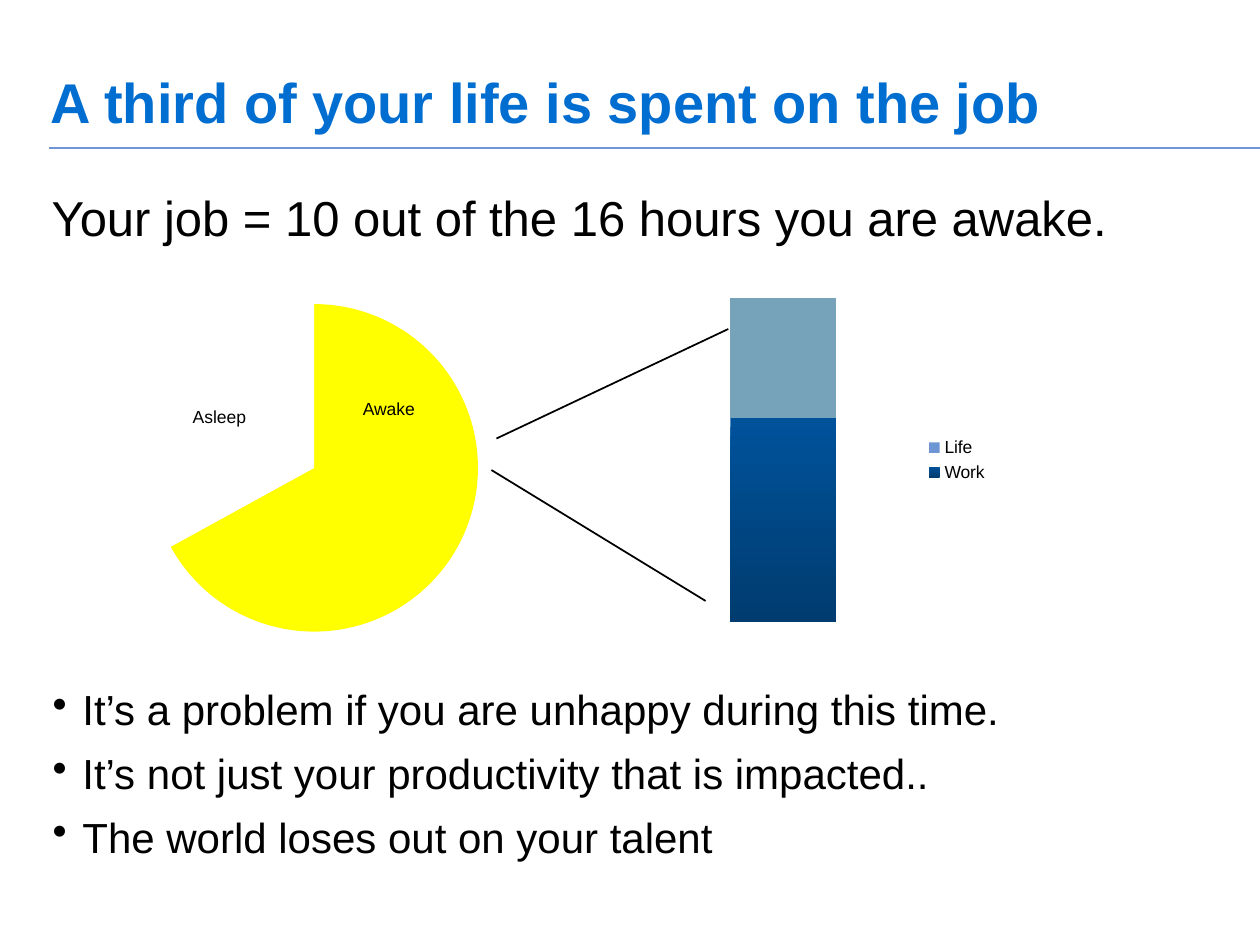
from lxml import etree
from pptx import Presentation
from pptx import util as u
from pptx.chart.data import CategoryChartData
from pptx.dml.color import RGBColor
from pptx.enum import chart as ch, shapes, text
from pptx.oxml import ns

Pt = u.Pt
HUES = {
    "title": "006DD0", "rule": "6E96D5", "ink": "000000",
    "awake": "FFFF00", "asleep": "FFFFFF",
    "work": "00529B", "deep": "003C6F", "life": "6E96D5", "free": "76A3BA",
}


def hue(name):
    return RGBColor.from_string(HUES[name])


def paint(fill, name):
    fill.solid()
    fill.fore_color.rgb = hue(name)


class Deck:
    """Holds the style and the current slide."""

    face = "Arial"

    def __init__(self):
        self.show = Presentation()
        self.show.slide_width, self.show.slide_height = Pt(720), Pt(540)
        self.slide = self.show.slides.add_slide(self.show.slide_layouts[1])

    def typeset(self, shape, lines, size, tone="ink", bold=False, bullet=None,
                indent=0, gap=(0, 0), anchor=text.MSO_ANCHOR.TOP, pad=3.6):
        frame = shape.text_frame
        form = {"word_wrap": True, "auto_size": text.MSO_AUTO_SIZE.NONE,
                "vertical_anchor": anchor, "margin_left": Pt(7.2),
                "margin_right": Pt(7.2), "margin_top": Pt(pad),
                "margin_bottom": Pt(pad)}
        for key, value in form.items():
            setattr(frame, key, value)
        frame.text = "\n".join(lines)
        for i, para in enumerate(frame.paragraphs):
            props = para._p.get_or_add_pPr()
            props.set("marL", str(Pt(indent)))
            props.set("indent", str(-Pt(indent)))
            mark = etree.SubElement(props, ns.qn("a:buChar" if bullet else "a:buNone"))
            if bullet:
                mark.set("char", bullet)
            form = {"alignment": text.PP_ALIGN.LEFT, "line_spacing": 0.9,
                    "space_before": Pt(gap[0] if i else 0),
                    "space_after": Pt(gap[1])}
            for key, value in form.items():
                setattr(para, key, value)
            for run in para.runs:
                self.style(run.font, size, tone, bold)

    def style(self, font, size, tone="ink", bold=False):
        form = {"name": self.face, "size": Pt(size), "bold": bold}
        for key, value in form.items():
            setattr(font, key, value)
        font.color.rgb = hue(tone)

    def fill(self, index, box, lines, size, **form):
        """Move and fill a template placeholder."""
        shape = self.slide.placeholders[index]
        shape.left, shape.top, shape.width, shape.height = map(Pt, box)
        self.typeset(shape, lines, size, **form)

    def text(self, box, lines, size, **form):
        self.typeset(self.slide.shapes.add_textbox(*map(Pt, box)), lines, size, **form)

    def line(self, start, end, tone="ink"):
        link = self.slide.shapes.add_connector(
            shapes.MSO_CONNECTOR.STRAIGHT, *map(Pt, start + end))
        link.line.color.rgb = hue(tone)
        link.line.width = Pt(1)
        etree.SubElement(link._element.spPr, ns.qn("a:effectLst"))

    def chart(self, kind, box, cats, series, area):
        """Add a chart whose plot fills the given fractions (x, y, w, h)."""
        data = CategoryChartData()
        data.categories = cats
        for name, values in series:
            data.add_series(name, values)
        chart = self.slide.shapes.add_chart(kind, *map(Pt, box), data).chart
        chart.has_title = chart.has_legend = False
        self.style(chart.font, 10)
        plot = chart._chartSpace.chart.plotArea
        for old in plot.findall(ns.qn("c:layout")):
            plot.remove(old)
        layout = etree.Element(ns.qn("c:layout"))
        plot.insert(0, layout)
        manual = etree.SubElement(layout, ns.qn("c:manualLayout"))
        rules = [("layoutTarget", "inner"), ("xMode", "edge"), ("yMode", "edge")]
        for tag, value in rules + list(zip("xywh", area)):
            etree.SubElement(manual, ns.qn("c:" + tag)).set("val", str(value))
        return chart

    def pie(self, box, cats, values, tones, area):
        chart = self.chart(ch.XL_CHART_TYPE.PIE, box, cats, [("Series 1", values)], area)
        chart.plots[0].vary_by_categories = False
        for i, tone in enumerate(tones):
            paint(chart.series[0].points[i].format.fill, tone)

    def stack(self, box, series, area):
        chart = self.chart(ch.XL_CHART_TYPE.COLUMN_STACKED_100, box, ["1"], series, area)
        for axis in (chart.category_axis, chart.value_axis):
            axis.has_major_gridlines = False
            axis.visible = False
        form = {"gap_width": 150, "overlap": 100, "vary_by_categories": False}
        for key, value in form.items():
            setattr(chart.plots[0], key, value)
        chart.has_legend = True
        chart.legend.position = ch.XL_LEGEND_POSITION.RIGHT
        chart.legend.include_in_layout = False
        self.style(chart.legend.font, 10)
        return chart


def main():
    deck = Deck()
    deck.line((28, 84.5), (720, 84.5), "rule")
    deck.fill(0, (21.6, 15, 659, 70), ["A third of your life is spent on the job"],
              32, tone="title", bold=True, anchor=text.MSO_ANCHOR.BOTTOM, pad=7.2)
    deck.fill(1, (22.3, 107.3, 658, 54),
              ["Your job = 10 out of the 16 hours you are awake."], 28, indent=27)
    deck.text((23, 390.2, 697, 109.5),
              ["It’s a problem if you are unhappy during this time.",
               "It’s not just your productivity that is impacted..",
               "The world loses out on your talent"],
              24, bullet="•", indent=17, gap=(8, 2.6))

    deck.pie((32.4, 163.4, 297.4, 208), ["1", "2"], [67, 33],
             ["awake", "asleep"], (0.18, 0.05, 0.63, 0.9))
    for word, left, top in [("Asleep", 103, 229.7), ("Awake", 200.2, 225.4)]:
        deck.text((left, top, 60, 25), [word], 10, indent=27)

    chart = deck.stack((368, 166.3, 203.8, 193), [("Work", [63]), ("Life", [37])],
                       (0.02, 0.02, 0.74, 0.96))
    work, life = chart.series
    shade = work.format.fill
    shade.gradient()
    shade.gradient_angle = 270
    for stop, tone in zip(shade.gradient_stops, ("work", "deep")):
        stop.color.rgb = hue(tone)
    paint(life.format.fill, "life")
    paint(life.points[0].format.fill, "free")

    deck.line((283.7, 250.6), (416.2, 188))
    deck.line((280.8, 268.6), (403.2, 343.4))
    deck.show.save("out.pptx")


if __name__ == "__main__":
    main()
